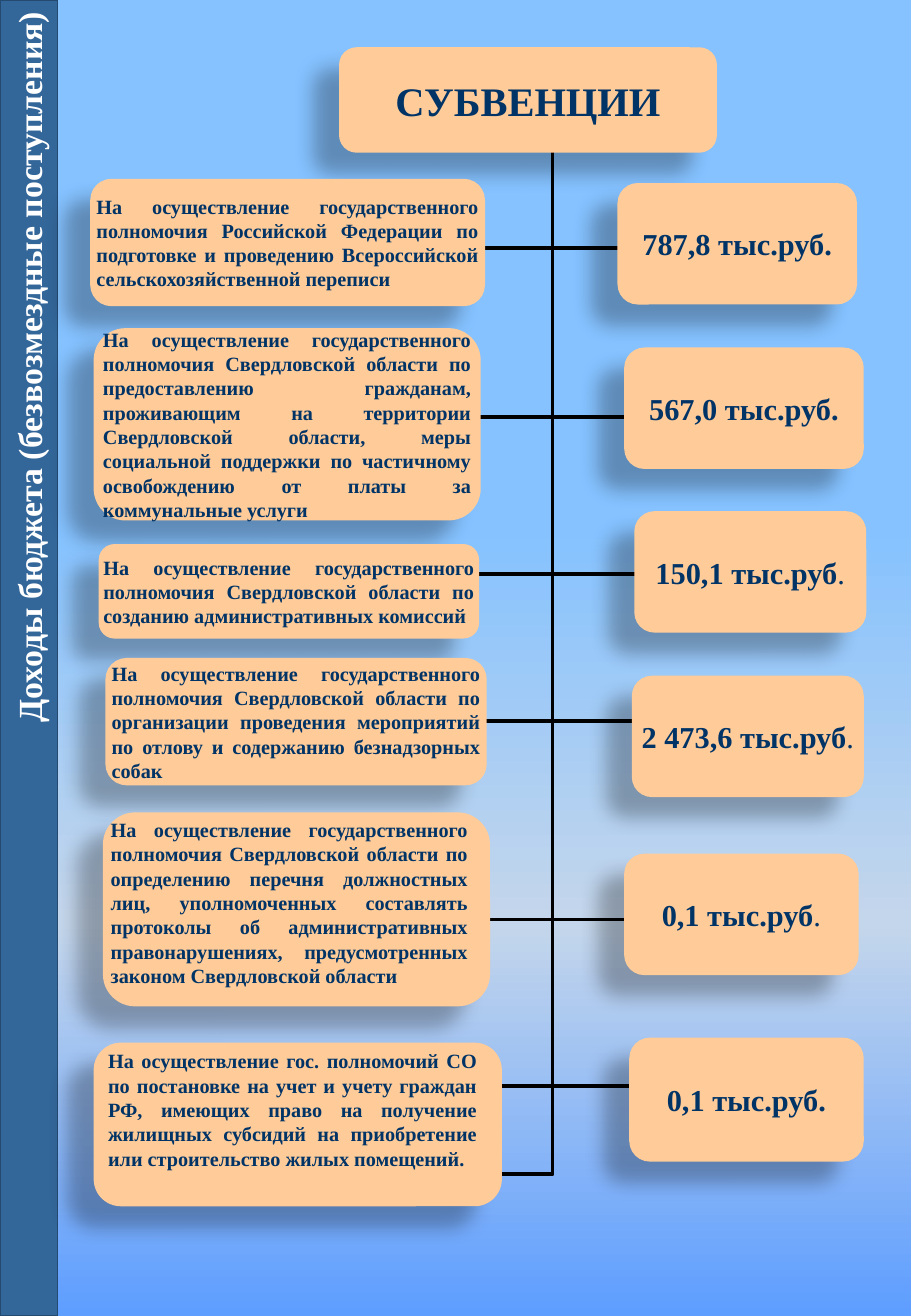
import lxml.etree
import pptx
import pptx.dml.color
import pptx.enum.shapes
import pptx.enum.text
import pptx.oxml.ns
import pptx.util

Pt = pptx.util.Pt
RGBColor = pptx.dml.color.RGBColor
SHAPE = pptx.enum.shapes.MSO_SHAPE
CONNECTOR = pptx.enum.shapes.MSO_CONNECTOR
ALIGN = pptx.enum.text.PP_ALIGN
ANCHOR = pptx.enum.text.MSO_ANCHOR
qn = pptx.oxml.ns.qn

# Content: boxes are (left, top, width, height) in points
SIDE_TITLE = "Доходы бюджета (безвозмездные поступления)"
HEADER = "СУБВЕНЦИИ"
HEADER_BOX = (201, 28, 224, 62.5)
STATE_POWERS = "На осуществление государственного полномочия "
REGION = STATE_POWERS + "Свердловской области по "
ROWS = [
    {"purpose": STATE_POWERS + "Российской Федерации по подготовке и проведению "
                "Всероссийской сельскохозяйственной переписи",
     "purpose_box": (53.5, 106, 234, 75.5),
     "amount": "787,8 тыс.руб", "bold_dot": True, "amount_box": (366, 108.5, 142, 72),
     "link": (274, 382, 147)},
    {"purpose": REGION + "предоставлению гражданам, проживающим на территории "
                "Свердловской области, меры социальной поддержки по частичному "
                "освобождению от платы за коммунальные услуги",
     "purpose_box": (55.5, 194.5, 229.5, 114),
     "amount": "567,0 тыс.руб", "bold_dot": True, "amount_box": (370, 206, 142, 72),
     "link": (258.5, 396, 247)},
    {"purpose": REGION + "созданию административных комиссий",
     "purpose_box": (58.5, 322.5, 225.5, 56),
     "amount": "150,1 тыс.руб", "bold_dot": False, "amount_box": (376, 303, 137.5, 72),
     "link": (271, 407, 340)},
    {"purpose": REGION + "организации проведения мероприятий по отлову и содержанию "
                "безнадзорных собак",
     "purpose_box": (62.5, 390, 226, 75.5),
     "amount": "2 473,6 тыс.руб", "bold_dot": False, "amount_box": (374.5, 400.5, 137.5, 72),
     "link": (276.5, 382, 427.5)},
    {"purpose": REGION + "определению перечня должностных лиц, уполномоченных "
                "составлять протоколы об административных правонарушениях, "
                "предусмотренных законом Свердловской области",
     "purpose_box": (61, 481.5, 229.5, 115), "text_box": (58.5, 481, 226, 108.5),
     "amount": "0,1 тыс.руб", "bold_dot": False, "amount_box": (370, 506, 139, 72),
     "link": (285, 401, 545)},
    {"purpose": "На осуществление гос. полномочий СО по постановке на учет и учету "
                "граждан РФ, имеющих право на получение жилищных субсидий на "
                "приобретение или строительство жилых помещений.",
     "purpose_box": (55.5, 618, 242, 97), "text_box": (57, 618, 233, 80),
     "amount": "0,1 тыс.руб", "bold_dot": True, "amount_box": (373, 615, 139, 73.5),
     "link": (286, 398, 643.5)},
]
TRUNK = (294.5, 696, 327.5, 58.5)

# Style
SLIDE_WIDTH, SLIDE_HEIGHT, SIDEBAR_WIDTH = 540, 780, 34
FONT = "Times New Roman"
PEACH = RGBColor(0xFF, 0xCC, 0x99)
NAVY = RGBColor(0x00, 0x33, 0x66)
STEEL = RGBColor(0x33, 0x66, 0x99)
STEEL_EDGE = RGBColor(0x24, 0x4A, 0x70)
BLACK = RGBColor(0x00, 0x00, 0x00)
WHITE = RGBColor(0xFF, 0xFF, 0xFF)
BACKGROUND = [(0, RGBColor(0x85, 0xC2, 0xFF)), (40, RGBColor(0x85, 0xC2, 0xFF)),
              (70, RGBColor(0xC4, 0xD6, 0xEB)), (100, RGBColor(0x5E, 0x9E, 0xFF))]


def points(values):
    return [Pt(value) for value in values]


def add_element(parent, tag, **attributes):
    return lxml.etree.SubElement(parent, qn(tag),
                                 {name: str(value) for name, value in attributes.items()})


def paint_background(slide):
    fill = slide.background.fill
    fill.gradient()
    fill.gradient_angle = 270
    stops = slide.element.find(".//" + qn("a:gsLst"))
    for stop in list(stops):
        stops.remove(stop)
    for percent, color in BACKGROUND:
        stop = add_element(stops, "a:gs", pos=percent * 1000)
        add_element(stop, "a:srgbClr", val=color)


def write(shape, text, size, color=NAVY, align=ALIGN.CENTER, anchor=ANCHOR.MIDDLE,
          margins=(0, 0), light_tail=""):
    frame = shape.text_frame
    frame.word_wrap = True
    frame.vertical_anchor = anchor
    frame.margin_left = frame.margin_right = Pt(margins[0])
    frame.margin_top = frame.margin_bottom = Pt(margins[1])
    paragraph = frame.paragraphs[0]
    paragraph.alignment = align
    for part, bold in ((text, True), (light_tail, False)):
        if part:
            run = paragraph.add_run()
            run.text = part
            run.font.name = FONT
            run.font.size = Pt(size)
            run.font.bold = bold
            run.font.color.rgb = color


def add_card(slide, box):
    card = slide.shapes.add_shape(SHAPE.ROUNDED_RECTANGLE, *points(box))
    card.fill.solid()
    card.fill.fore_color.rgb = PEACH
    card.line.fill.background()
    card.shadow.inherit = False
    effects = card.element.spPr.find(qn("a:effectLst"))
    shadow = add_element(effects, "a:outerShdw", blurRad=Pt(11.8), dist=Pt(19.7),
                         dir=141 * 60000, algn="ctr", rotWithShape=0)
    add_element(add_element(shadow, "a:srgbClr", val=BLACK), "a:alpha", val=28000)
    return card


def add_line(slide, kind, ends):
    line = slide.shapes.add_connector(kind, *points(ends))
    line.line.color.rgb = BLACK
    line.line.width = Pt(2.25)
    add_element(line.element.spPr, "a:effectLst")
    return line


def main():
    presentation = pptx.Presentation()
    presentation.slide_width, presentation.slide_height = Pt(SLIDE_WIDTH), Pt(SLIDE_HEIGHT)
    slide = presentation.slides.add_slide(presentation.slide_layouts[6])
    paint_background(slide)

    # Sidebar with the upright title
    sidebar = slide.shapes.add_shape(SHAPE.RECTANGLE,
                                     *points((0, 0, SIDEBAR_WIDTH, SLIDE_HEIGHT)))
    sidebar.fill.solid()
    sidebar.fill.fore_color.rgb = STEEL
    sidebar.line.color.rgb = STEEL_EDGE
    sidebar.line.width = Pt(0.75)
    sidebar.shadow.inherit = False
    offset = (SLIDE_HEIGHT - SIDEBAR_WIDTH) / 2
    title = slide.shapes.add_textbox(*points((-offset, offset, SLIDE_HEIGHT, SIDEBAR_WIDTH)))
    title.rotation = 270
    write(title, SIDE_TITLE, 20, color=WHITE, align=ALIGN.RIGHT, margins=(7.2, 3.6))

    # Links run behind the cards
    for row in ROWS:
        start, end, height = row["link"]
        add_line(slide, CONNECTOR.STRAIGHT, (start, height, end, height))
    trunk = add_line(slide, CONNECTOR.ELBOW, TRUNK)
    trunk.element.spPr.find(qn("a:prstGeom")).set("prst", "bentConnector2")

    # Header, purposes and amounts
    write(add_card(slide, HEADER_BOX), HEADER, 24)
    for row in ROWS:
        card = add_card(slide, row["purpose_box"])
        if "text_box" in row:
            note = slide.shapes.add_textbox(*points(row["text_box"]))
            write(note, row["purpose"], 12, align=ALIGN.JUSTIFY, anchor=ANCHOR.TOP,
                  margins=(7.2, 3.6))
        else:
            write(card, row["purpose"], 12, align=ALIGN.JUSTIFY)
        amount = add_card(slide, row["amount_box"])
        if row["bold_dot"]:
            write(amount, row["amount"] + ".", 18)
        else:
            write(amount, row["amount"], 18, light_tail=".")

    presentation.save("out.pptx")


if __name__ == "__main__":
    main()
